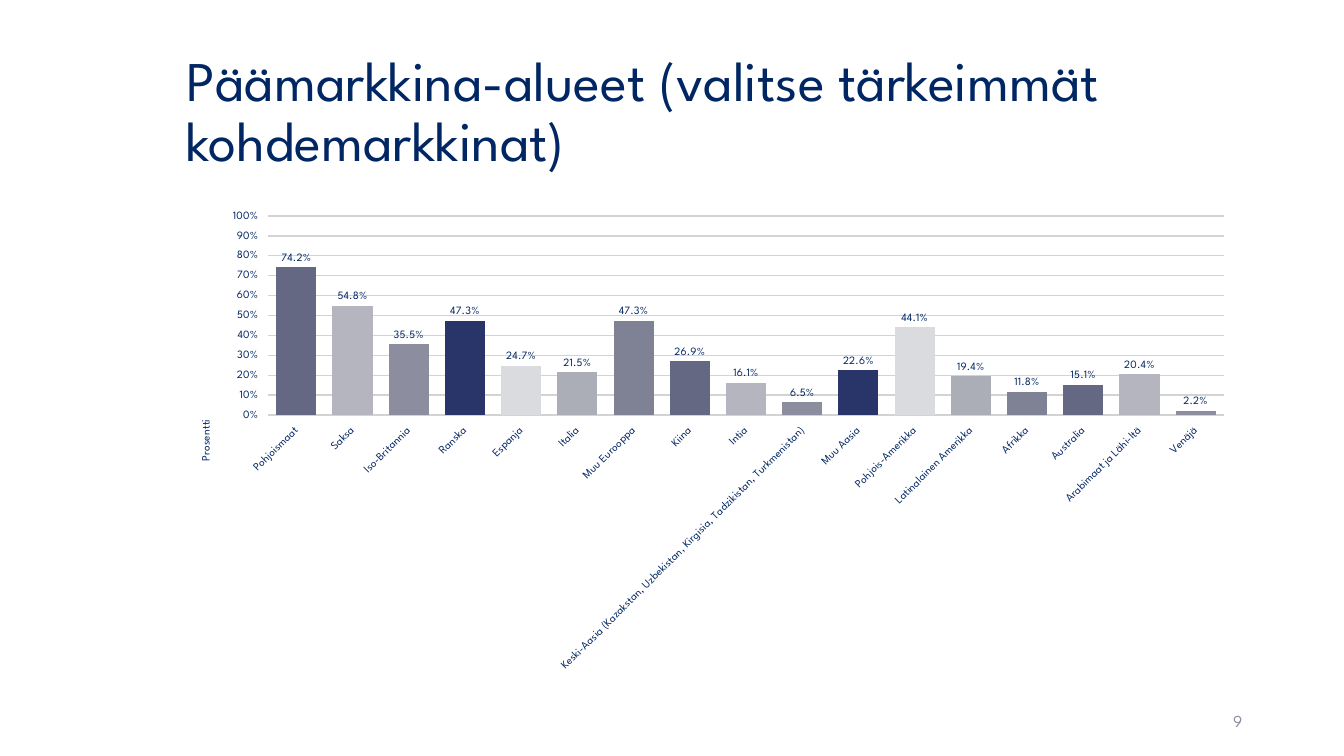
from dataclasses import dataclass
from itertools import cycle

from lxml import etree
from pptx import Presentation
from pptx.chart.data import CategoryChartData
from pptx.dml.color import RGBColor
from pptx.enum.chart import XL_CHART_TYPE, XL_LABEL_POSITION, XL_TICK_MARK
from pptx.enum.text import MSO_ANCHOR, MSO_AUTO_SIZE, PP_ALIGN
from pptx.oxml.ns import qn
from pptx.util import Inches, Pt

COLUMNS = XL_CHART_TYPE.COLUMN_CLUSTERED
OUTSIDE = XL_LABEL_POSITION.OUTSIDE_END
TICK_OUT = XL_TICK_MARK.OUTSIDE
MIDDLE = MSO_ANCHOR.MIDDLE
NO_FIT = MSO_AUTO_SIZE.NONE
LEFT, RIGHT = PP_ALIGN.LEFT, PP_ALIGN.RIGHT

GRID_UNIT = 0.25
DEGREE = 60000


@dataclass(frozen=True)
class Theme:
    font: str = "League Spartan"
    navy: str = "002663"
    grey: str = "8C8E9F"
    gridline: str = "D3D3D3"
    bars: tuple[str, ...] = ("646883", "B4B5BF", "8C8E9F", "293568",
                             "DADBDF", "ABADB7", "7F8195")
    title_size: int = 40
    chart_size: int = 18
    number_size: int = 12
    label_size: int = 8


@dataclass(frozen=True)
class Area:
    column: float
    row: float
    columns: float
    rows: float

    def bounds(self) -> dict:
        return {
            "left": Inches(self.column * GRID_UNIT),
            "top": Inches(self.row * GRID_UNIT),
            "width": Inches(self.columns * GRID_UNIT),
            "height": Inches(self.rows * GRID_UNIT),
        }


@dataclass(frozen=True)
class Market:
    name: str
    share: float


THEME = Theme()
TITLE_AREA = Area(7, 1.6, 42.36, 5.8)
CHART_AREA = Area(7, 8, 42.36, 19.04)
NUMBER_AREA = Area(37.68, 27.8, 12, 1.6)

MARKETS = [
    Market("Pohjoismaat", 0.742),
    Market("Saksa", 0.548),
    Market("Iso-Britannia", 0.355),
    Market("Ranska", 0.473),
    Market("Espanja", 0.247),
    Market("Italia", 0.215),
    Market("Muu Eurooppa", 0.473),
    Market("Kiina", 0.269),
    Market("Intia", 0.161),
    Market("Keski-Aasia (Kazakstan, Uzbekistan, Kirgisia, Tadzikistan, Turkmenistan)", 0.065),
    Market("Muu Aasia", 0.226),
    Market("Pohjois-Amerikka", 0.441),
    Market("Latinalainen Amerikka", 0.194),
    Market("Afrikka", 0.118),
    Market("Australia", 0.151),
    Market("Arabimaat ja Lähi-Itä", 0.204),
    Market("Venäjä", 0.022),
]


def apply(target, values: dict) -> None:
    for name, value in values.items():
        setattr(target, name, value)


def style_font(font, size: int, color: str) -> None:
    apply(font, {"name": THEME.font, "size": Pt(size), "bold": False})
    font.color.rgb = RGBColor.from_string(color)


def write_text(shape, text: str, size: int, color: str, paragraph_format: dict) -> None:
    frame = shape.text_frame
    apply(frame, {"text": text, "word_wrap": True, "auto_size": NO_FIT,
                  "vertical_anchor": MIDDLE})
    para = frame.paragraphs[0]
    apply(para, paragraph_format)
    style_font(para.runs[0].font, size, color)


def rotate(body, degrees: int) -> None:
    body.set("rot", str(degrees * DEGREE))
    body.set("vert", "horz")


def place(parent, index: int, values: dict) -> None:
    for old in parent.findall(qn("c:layout")):
        parent.remove(old)
    layout = etree.Element(qn("c:layout"))
    manual = etree.SubElement(layout, qn("c:manualLayout"))
    for name, value in values.items():
        etree.SubElement(manual, qn(f"c:{name}")).set("val", str(value))
    parent.insert(index, layout)


def style_axes(chart) -> None:
    for axis in (chart.category_axis, chart.value_axis):
        axis.major_tick_mark = TICK_OUT
        axis.format.line.fill.background()
        style_font(axis.tick_labels.font, THEME.label_size, THEME.navy)
    label_properties = chart.category_axis._element.find(qn("c:txPr"))
    rotate(label_properties.find(qn("a:bodyPr")), -45)

    percent = chart.value_axis
    apply(percent, {"minimum_scale": 0, "maximum_scale": 1, "major_unit": 0.1,
                    "has_major_gridlines": True})
    apply(percent.tick_labels, {"number_format": "0%", "number_format_is_linked": False})
    gridline = percent.major_gridlines.format.line
    gridline.width = Pt(1)
    gridline.color.rgb = RGBColor.from_string(THEME.gridline)

    frame = percent.axis_title.text_frame
    frame.text = "Prosentti"
    style_font(frame.paragraphs[0].runs[0].font, THEME.label_size, THEME.navy)
    rotate(frame._txBody.find(qn("a:bodyPr")), -90)
    place(percent.axis_title._element, 1,
          {"xMode": "edge", "yMode": "edge", "x": 0.02, "y": 0.45})


def add_market_chart(page) -> None:
    data = CategoryChartData(number_format="0.0%")
    data.categories = [market.name for market in MARKETS]
    data.add_series("Series 1", [market.share for market in MARKETS])
    bounds = CHART_AREA.bounds()
    chart = page.shapes.add_chart(COLUMNS, bounds["left"], bounds["top"],
                                  bounds["width"], bounds["height"], data).chart
    apply(chart, {"has_legend": False, "has_title": False})
    style_font(chart.font, THEME.chart_size, THEME.navy)
    style_axes(chart)

    plot = chart.plots[0]
    apply(plot, {"gap_width": 40, "overlap": -2, "vary_by_categories": False,
                 "has_data_labels": True})
    apply(plot.data_labels, {"show_value": True, "number_format": "0.0%",
                             "number_format_is_linked": False, "position": OUTSIDE})
    style_font(plot.data_labels.font, THEME.label_size, THEME.navy)
    for index, (_, color) in enumerate(zip(MARKETS, cycle(THEME.bars))):
        fill = plot.series[0].points[index].format.fill
        fill.solid()
        fill.fore_color.rgb = RGBColor.from_string(color)
    place(chart._chartSpace.chart.plotArea, 0,
          {"layoutTarget": "inner", "xMode": "edge", "yMode": "edge",
           "x": 0.086, "y": 0.03, "w": 0.895, "h": 0.415})


def main() -> None:
    deck = Presentation()
    apply(deck, {"slide_width": Inches(13.33), "slide_height": Inches(7.5)})
    page = deck.slides.add_slide(deck.slide_layouts.get_by_name("Title Only"))

    title = page.shapes.title
    apply(title, TITLE_AREA.bounds())
    write_text(title, "Päämarkkina-alueet (valitse tärkeimmät kohdemarkkinat)",
               THEME.title_size, THEME.navy, {"alignment": LEFT, "line_spacing": 0.9})
    add_market_chart(page)
    number = page.shapes.add_textbox(**NUMBER_AREA.bounds())
    write_text(number, "9", THEME.number_size, THEME.grey, {"alignment": RIGHT})
    deck.save("out.pptx")


if __name__ == "__main__":
    main()
